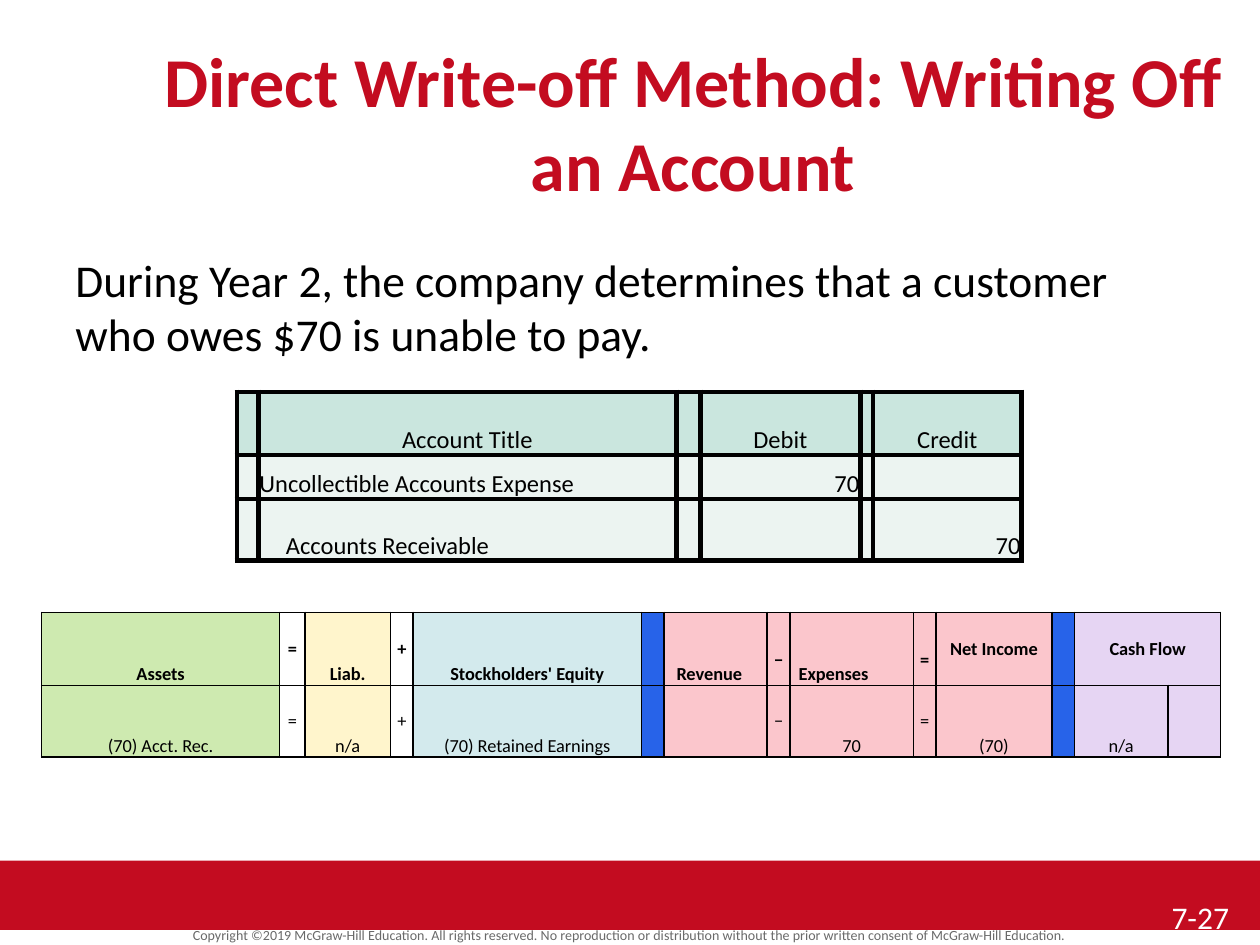
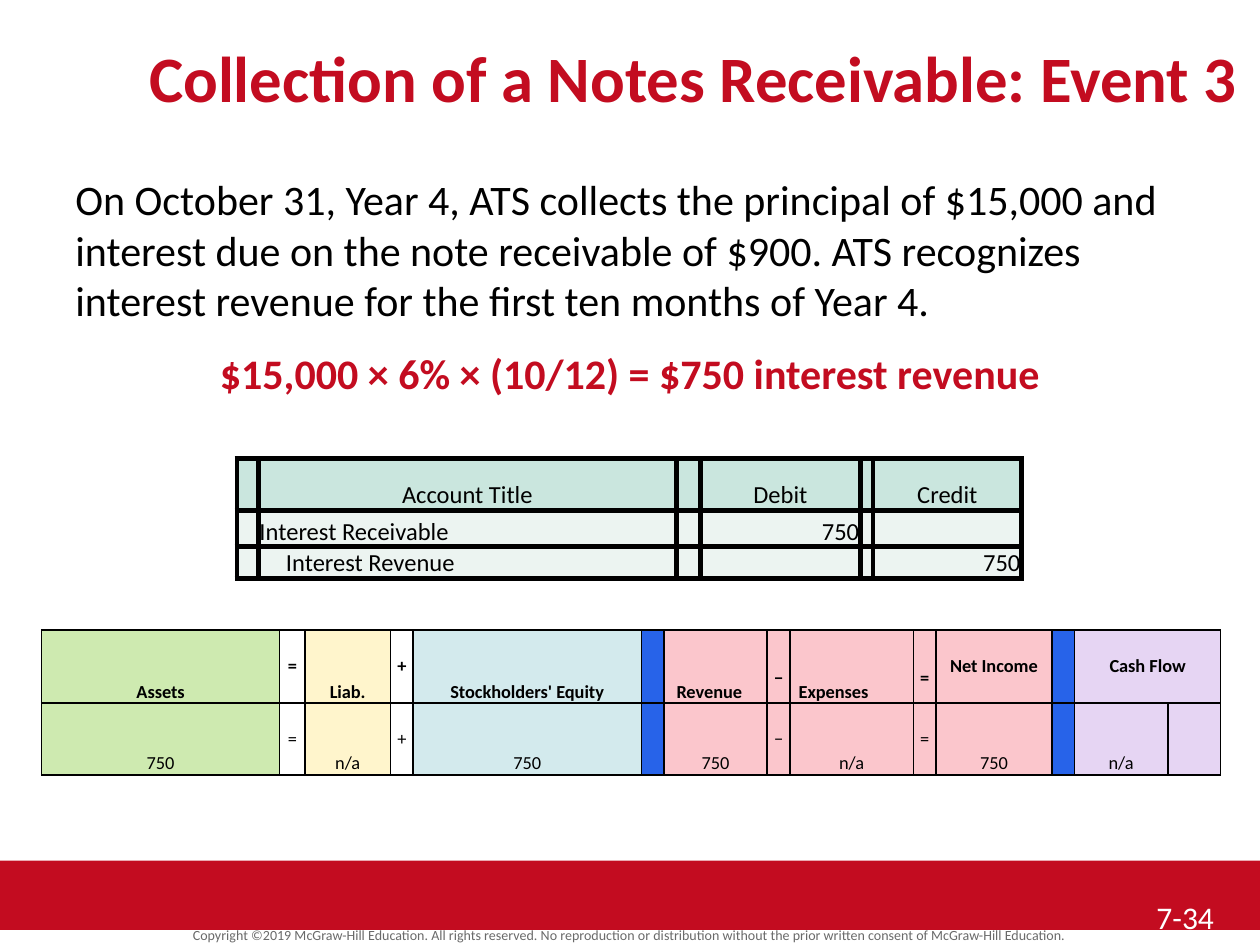
from pptx import Presentation
from pptx.dml.color import RGBColor
from pptx.enum.shapes import MSO_SHAPE
from pptx.enum.text import MSO_ANCHOR as ANCHOR, PP_ALIGN as ALIGN
from pptx.oxml import parse_xml
from pptx.oxml.ns import nsdecls
from pptx.util import Inches, Pt

FONT = "Calibri"
RED, BLACK, WHITE, GRAY = "C30C20", "000000", "FFFFFF", "6A6A6A"
HEAD_GREEN, ROW_GREEN = "CAE6DE", "ECF4F1"
GREEN, YELLOW, TEAL, PINK, PURPLE, BLUE = (
    "CEEAB0", "FFF5CC", "D3EAED", "FBC6CC", "E6D5F3", "2763E9")
COPYRIGHT = ("Copyright ©2019 McGraw-Hill Education. All rights reserved. No reproduction "
             "or distribution without the prior written consent of McGraw-Hill Education.")

JOURNAL_WIDTHS = [0.17, 3.32, 0.19, 1.27, 0.1, 1.18]
EQUATION = [
    ("Assets", 1.89, GREEN), ("=", 0.2, None), ("Liab.", 0.68, YELLOW),
    ("+", 0.18, None), ("Stockholders' Equity", 1.81, TEAL), ("", 0.18, BLUE),
    ("Revenue", 0.82, PINK), ("−", 0.18, PINK), ("Expenses", 0.98, PINK),
    ("=", 0.18, PINK), ("Net Income", 0.92, PINK), ("", 0.18, BLUE),
    ("Cash Flow", 0.74, PURPLE), ("", 0.42, PURPLE)]
OPERATORS = ("=", "+", "−")


def rgb(color):
    return RGBColor.from_string(color)


def style(p, size, color=BLACK, bold=False, align=ALIGN.LEFT):
    p.alignment = align
    p.font.name = FONT
    p.font.size = Pt(size)
    p.font.bold = bold
    p.font.color.rgb = rgb(color)


def add_text(s, x, y, w, h, text, size, color=BLACK, bold=False, align=ALIGN.LEFT):
    tf = s.shapes.add_textbox(Inches(x), Inches(y), Inches(w), Inches(h)).text_frame
    tf.word_wrap = True
    p = tf.paragraphs[0]
    p.text = text
    style(p, size, color, bold, align)
    return tf


def add_band(s):
    sp = s.shapes.add_shape(MSO_SHAPE.RECTANGLE, 0, Inches(6.83), Inches(10), Inches(0.55))
    sp.shadow.inherit = False
    sp.fill.solid()
    sp.fill.fore_color.rgb = rgb(RED)
    sp.line.fill.background()


def add_footer(s, number, number_x):
    add_band(s)
    tf = add_text(s, 0, 7.34, 10, 0.19, COPYRIGHT, 8, GRAY, align=ALIGN.CENTER)
    tf.margin_top = tf.margin_bottom = 0
    tf.vertical_anchor = ANCHOR.MIDDLE
    tf.paragraphs[0].line_spacing = 0.8
    add_text(s, number_x, 7.08, 10 - number_x, 0.42, number, 18, WHITE)


def add_slide(prs, title, title_size, number, number_x):
    s = prs.slides.add_slide(prs.slide_layouts[6])
    add_footer(s, number, number_x)
    add_text(s, 1, 0.25, 9, 0.67, title, title_size, RED, True, ALIGN.CENTER)
    return s


def add_grid(s, x, y, widths, heights):
    frame = s.shapes.add_table(len(heights), len(widths), Inches(x), Inches(y),
                               Inches(sum(widths)), Inches(sum(heights)))
    table = frame.table
    table.first_row = table.horz_banding = False
    for column, width in zip(table.columns, widths):
        column.width = Inches(width)
    for row, height in zip(table.rows, heights):
        row.height = Inches(height)
    return table


def set_borders(cell, points):
    tc_pr = cell._tc.get_or_add_tcPr()
    for side in ("lnL", "lnR", "lnT", "lnB"):
        tc_pr.append(parse_xml(
            f'<a:{side} {nsdecls("a")} w="{Pt(points)}"><a:solidFill>'
            f'<a:srgbClr val="{BLACK}"/></a:solidFill></a:{side}>'))


def set_cell(cell, text, size, fill, border, align=ALIGN.CENTER, bold=False,
             anchor=ANCHOR.BOTTOM, left=0.01, right=0.01, top=0):
    set_borders(cell, border)
    if fill:
        cell.fill.solid()
        cell.fill.fore_color.rgb = rgb(fill)
    else:
        cell.fill.background()
    cell.margin_left, cell.margin_right = Inches(left), Inches(right)
    cell.margin_top, cell.margin_bottom = Inches(top), 0
    cell.vertical_anchor = anchor
    p = cell.text_frame.paragraphs[0]
    if text:
        p.text = text
    else:
        p._p.get_or_add_endParaRPr().set("sz", str(int(size * 100)))
    style(p, size, bold=bold, align=align)


def add_journal(s, y, heights, debit_account, credit_account, amount):
    table = add_grid(s, 1.88, y, JOURNAL_WIDTHS, heights)
    rows = [["", "Account Title", "", "Debit", "", "Credit"],
            ["", debit_account, "", amount, "", ""],
            ["", credit_account, "", "", "", amount]]
    for i, row in enumerate(rows):
        for j, text in enumerate(row):
            if i == 0:
                align = ALIGN.CENTER
            else:
                align = ALIGN.LEFT if j == 1 else ALIGN.RIGHT
            indent = 0.22 if (i, j) == (2, 1) else 0.01
            set_cell(table.cell(i, j), text, 14, ROW_GREEN if i else HEAD_GREEN, 3,
                     align, left=indent)


def add_equation(s, y, amounts):
    table = add_grid(s, 0.33, y, [width for _, width, _ in EQUATION], [0.58, 0.57])
    remaining = iter(amounts)
    for j, (heading, _, fill) in enumerate(EQUATION):
        operator = heading in OPERATORS
        inset = 0.07 if heading and not operator else 0
        left_aligned = heading in ("Revenue", "Expenses")
        centered = operator or heading in ("Net Income", "Cash Flow")
        set_cell(table.cell(0, j), heading, 10.5, fill, 1,
                 ALIGN.LEFT if left_aligned else ALIGN.CENTER, True,
                 ANCHOR.MIDDLE if centered else ANCHOR.BOTTOM,
                 left=0.1 if heading == "Revenue" else inset, right=inset,
                 top=0.18 if operator and fill else 0)
        value = heading if operator or not heading else next(remaining)
        set_cell(table.cell(1, j), value, 10.5, fill, 1,
                 anchor=ANCHOR.MIDDLE if operator else ANCHOR.BOTTOM,
                 left=inset, right=inset)
    table.cell(0, 12).merge(table.cell(0, 13))


def add_write_off_slide(prs):
    s = add_slide(prs, "Direct Write-off Method: Writing Off an Account", 40, "7-27", 9.2)
    add_text(s, 0.5, 1.95, 9, 1, "During Year 2, the company determines that a customer "
             "who owes $70 is unable to pay.", 26)
    add_equation(s, 4.86, ["(70) Acct. Rec.", "n/a", "(70) Retained Earnings",
                           "", "70", "(70)", "n/a"])
    add_journal(s, 3.11, [0.5, 0.35, 0.49], "Uncollectible Accounts Expense",
                "Accounts Receivable", "70")


def add_collection_slide(prs):
    s = add_slide(prs, "Collection of a Notes Receivable: Event 3", 37, "7-34", 9.08)
    tf = add_text(s, 0.5, 1.33, 9, 2, "On October 31, Year 4, ATS collects the principal of "
                  "$15,000 and interest due on the note receivable of $900. ATS recognizes "
                  "interest revenue for the first ten months of Year 4.", 24)
    p = tf.add_paragraph()
    p.text = "$15,000 × 6% × (10/12) = $750 interest revenue"
    p.space_before = Pt(12.8)
    style(p, 24, RED, True, ALIGN.CENTER)
    add_journal(s, 3.64, [0.41, 0.29, 0.25], "Interest Receivable", "Interest Revenue", "750")
    add_equation(s, 5, ["750", "n/a", "750", "750", "n/a", "750", "n/a"])


def main():
    prs = Presentation()
    prs.slide_width, prs.slide_height = Inches(10), Inches(7.5)
    add_write_off_slide(prs)
    add_collection_slide(prs)
    prs.save("out.pptx")


if __name__ == "__main__":
    main()
